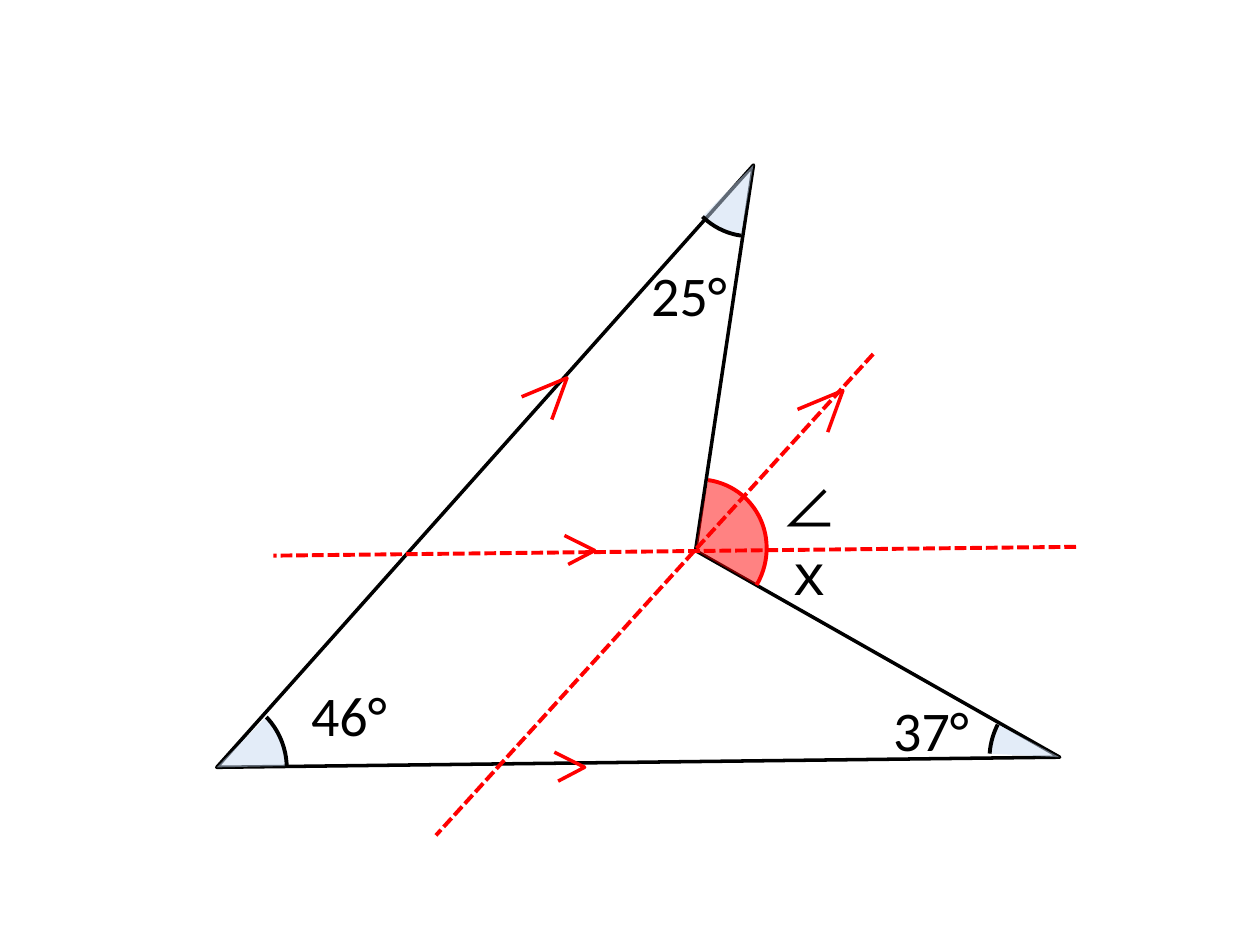
from pptx import Presentation
from pptx.dml.color import RGBColor
from pptx.enum.dml import MSO_LINE
from pptx.enum.shapes import MSO_CONNECTOR, MSO_SHAPE
from pptx.enum.text import MSO_AUTO_SIZE
from pptx.oxml.ns import qn
from pptx.util import Inches, Pt
from lxml import etree

ARC = MSO_SHAPE.ARC
STRAIGHT = MSO_CONNECTOR.STRAIGHT
SYS_DASH = MSO_LINE.SQUARE_DOT
GROW = MSO_AUTO_SIZE.SHAPE_TO_FIT_TEXT

BLACK, RED, PALE = "000000", "FF0000", "C6D9F1"
TOP, LEFT, RIGHT, INNER = (5.98, 1.31), (1.72, 6.09), (8.41, 6.01), (5.52, 4.37)
OUTLINE = [TOP, LEFT, RIGHT, INNER]

# vertex, width, height, rotation, start and end angle, fill, line
ANGLES = [
    (LEFT, 1.11, 1.15, 167.8, 146.8, 191.08, PALE, BLACK),
    (TOP, 1.15, 1.11, 313.2, 146.8, 181.4, PALE, BLACK),
    (RIGHT, 1.11, 1.15, 16.8, 166.21, 191.08, PALE, BLACK),
    (INNER, 1.15, 1.11, 133.2, 146.8, 256.22, RED, RED),
]
LABELS = [
    ("∠ｘ", 6.1, 3.7, 0.88),
    ("46°", 2.37, 5.35, 1.11),
    ("37°", 6.99, 5.47, 1.11),
    ("25°", 5.07, 2.02, 1.11),
]
PARALLELS = [((6.93, 2.81), (3.46, 6.63)), ((8.54, 4.34), (2.17, 4.41))]
FLAT = [(-0.24, -0.12), (0, 0), (-0.21, 0.11)]
SLANTED = [(-0.36, 0.15), (0, 0), (-0.12, 0.33)]
MARKS = [
    ((4.64, 6.09), FLAT),
    ((4.72, 4.37), FLAT),
    ((4.5, 3), SLANTED),
    ((6.69, 3.1), SLANTED),
]


def color(hex_value):
    return RGBColor.from_string(hex_value)


def set_line(sp, hex_value, width):
    sp.line.color.rgb = color(hex_value)
    sp.line.width = Pt(width)


def add_path(s, points, hex_value, close):
    (x, y), *rest = [(Inches(px), Inches(py)) for px, py in points]
    builder = s.shapes.build_freeform(x, y)
    builder.add_line_segments(rest, close=close)
    sp = builder.convert_to_shape()
    sp.shadow.inherit = False
    sp.fill.background()
    set_line(sp, hex_value, 2)


def add_angle(s, vertex, w, h, rotation, start, end, fill, line):
    x, y = vertex
    sp = s.shapes.add_shape(ARC, Inches(x - w / 2), Inches(y - h / 2), Inches(w), Inches(h))
    sp.adjustments[0], sp.adjustments[1] = start * 0.6, end * 0.6
    sp.rotation = rotation
    sp.shadow.inherit = False
    sp.fill.solid()
    sp.fill.fore_color.rgb = color(fill)
    tint = sp.fill._xPr.find(qn("a:solidFill"))[0]
    etree.SubElement(tint, qn("a:alpha"), val="49000")
    set_line(sp, line, 2.25)


def add_text(s, text, x, y, w, h=0.64, size=32, font="Calibri", hex_value=BLACK):
    tf = s.shapes.add_textbox(Inches(x), Inches(y), Inches(w), Inches(h)).text_frame
    tf.word_wrap = True
    tf.auto_size = GROW
    r = tf.paragraphs[0].add_run()
    r.text = text
    r.font.size = Pt(size)
    r.font.name = font
    r.font.color.rgb = color(hex_value)


def add_dashed(s, start, end):
    sp = s.shapes.add_connector(STRAIGHT, *[Inches(v) for v in start + end])
    set_line(sp, RED, 2.25)
    sp.line.dash_style = SYS_DASH
    etree.SubElement(sp._element.spPr, qn("a:effectLst"))


def main():
    prs = Presentation()
    prs.slide_width, prs.slide_height = Inches(10), Inches(7.5)
    s = prs.slides.add_slide(prs.slide_layouts[6])
    add_path(s, OUTLINE, BLACK, True)
    for angle in ANGLES:
        add_angle(s, *angle)
    for label in LABELS:
        add_text(s, *label)
    for start, end in PARALLELS:
        add_dashed(s, start, end)
    for (x, y), offsets in MARKS:
        add_path(s, [(x + dx, y + dy) for dx, dy in offsets], RED, False)
    prs.save("out.pptx")


if __name__ == "__main__":
    main()
